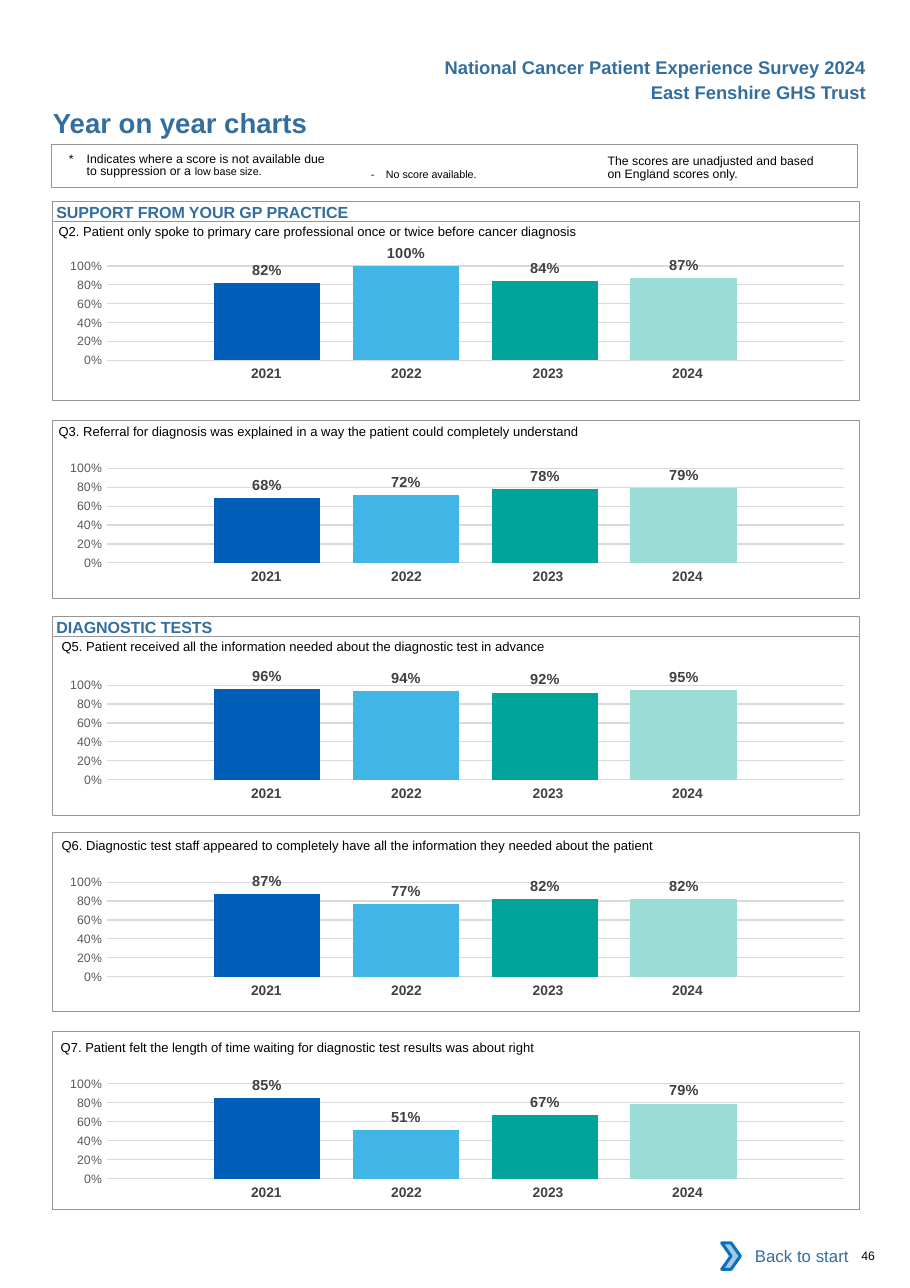
from pptx import Presentation
from pptx.chart.data import CategoryChartData
from pptx.dml.color import RGBColor
from pptx.enum.chart import XL_CHART_TYPE as ChartType, XL_LABEL_POSITION as LabelPos
from pptx.enum.chart import XL_TICK_MARK as Tick
from pptx.enum.shapes import MSO_SHAPE as Shape
from pptx.enum.text import MSO_ANCHOR as Anchor, PP_ALIGN as Align
from pptx.oxml import parse_xml
from pptx.oxml.ns import nsdecls
from pptx.util import Cm, Pt

COLORS = {
    "heading": "336E9F", "text": "000000", "frame": "939598", "white": "FFFFFF",
    "year": "414042", "label": "404040", "axis": "595959", "grid": "D9D9D9",
    "arrow": "A8C7E9", "arrow_line": "0A74BB",
}
YEARS = {"2021": "005EB8", "2022": "41B6E6", "2023": "00A499", "2024": "9CDCD7"}
YEAR_WIDTHS = [3.23, 3.23, 3.4, 3.23]
YEAR_INSETS = [0, 0, 0.1, 0.3]
LEFT, WIDTH, PANEL_H, SECTION_H = 1.22, 18.59, 4.11, 0.47

# frame top, section, question, question offset (x, y), chart offset, scores
PANELS = [
    (5.11, "SUPPORT FROM YOUR GP PRACTICE",
     "Q2. Patient only spoke to primary care professional once or twice before cancer diagnosis",
     (0.13, -0.18), 0.53, (0.82, 1, 0.84, 0.87)),
    (9.68, None,
     "Q3. Referral for diagnosis was explained in a way the patient could completely understand",
     (0.13, -0.15), 0.64, (0.68, 0.72, 0.78, 0.79)),
    (14.68, "DIAGNOSTIC TESTS",
     "Q5. Patient received all the information needed about the diagnostic test in advance",
     (0.2, -0.18), 0.64, (0.96, 0.94, 0.92, 0.95)),
    (19.2, None,
     "Q6. Diagnostic test staff appeared to completely have all the information "
     "they needed about the patient",
     (0.2, -0.13), 0.66, (0.87, 0.77, 0.82, 0.82)),
    (23.77, None,
     "Q7. Patient felt the length of time waiting for diagnostic test results was about right",
     (0.18, -0.03), 0.74, (0.85, 0.51, 0.67, 0.79)),
]


def rgb(name):
    return RGBColor.from_string(COLORS[name])


def style_font(font, size, color, bold=False):
    font.name, font.size, font.bold = "Arial", Pt(size), bold
    font.color.rgb = rgb(color)


def write(tf, text, size, color="text", bold=False, align=Align.LEFT,
          inset=(0, 0, 0, 0), wrap=True):
    tf.word_wrap = wrap
    tf.margin_left, tf.margin_top, tf.margin_right, tf.margin_bottom = map(Cm, inset)
    tf.text = text
    p = tf.paragraphs[0]
    p.alignment = align
    style_font(p.runs[0].font, size, color, bold)
    return p


def add_text(s, x, y, w, h, text, size, **style):
    sp = s.shapes.add_textbox(Cm(x), Cm(y), Cm(w), Cm(h))
    return write(sp.text_frame, text, size, **style)


def add_box(s, x, y, w, h, kind=Shape.RECTANGLE, fill=None, line="frame", weight=0.5):
    sp = s.shapes.add_shape(kind, Cm(x), Cm(y), Cm(w), Cm(h))
    sp.shadow.inherit = False
    if fill:
        sp.fill.solid()
        sp.fill.fore_color.rgb = rgb(fill)
    else:
        sp.fill.background()
    if line:
        sp.line.color.rgb = rgb(line)
        sp.line.width = Pt(weight)
    else:
        sp.line.fill.background()
    return sp


def hang(p, indent):
    pPr = p._p.get_or_add_pPr()
    pPr.set("marL", str(Cm(indent)))
    pPr.set("indent", str(-Cm(indent)))


def add_header(s, x, y, w):
    lines = ["National Cancer Patient Experience Survey 2024", "East Fenshire GHS Trust"]
    for i, line in enumerate(lines):
        add_text(s, x + w - 10.26, y + i * 0.57, 10.26, 0.76, line, 12, color="heading",
                 bold=True, align=Align.RIGHT, inset=(0.25, 0.13, 0.25, 0.13), wrap=False)
    add_text(s, x, y + 1.28, 11.43, 0.76, "Year on year charts", 18,
             color="heading", bold=True)


def add_legend(s, x, y, w, h):
    add_box(s, x, y, w, h, weight=0.75)
    # Suppressed scores
    p = add_text(s, x + 0.4, y + 0.13, 6.1, 0.7, "*\tIndicates where a score is not "
                 "available due to suppression or a ", 8, inset=(0, 0.08, 0, 0))
    hang(p, 0.41)
    p.line_spacing = Pt(8.1)
    r = p.add_run()
    r.text = "low base size."
    style_font(r.font, 7, "text")
    # Missing scores
    p = add_text(s, x + 7.36, y + 0.53, 4.2, 0.35, "-\tNo score available.", 7)
    hang(p, 0.35)
    # Basis of scores
    p = add_text(s, x + 12.82, y + 0.18, 5.11, 0.69,
                 "The scores are unadjusted and based on England scores only.", 8,
                 inset=(0, 0.08, 0, 0))
    p.line_spacing = Pt(8.1)


def add_years(s, x, y):
    table = s.shapes.add_table(1, len(YEARS), Cm(x), Cm(y),
                               Cm(sum(YEAR_WIDTHS)), Cm(0.69)).table
    table.first_row = table.horz_banding = False
    for i, year in enumerate(YEARS):
        table.columns[i].width = Cm(YEAR_WIDTHS[i])
        cell = table.cell(0, i)
        cell.fill.background()
        cell.margin_left, cell.margin_right = Cm(0.25), Cm(YEAR_INSETS[i])
        cell.text = year
        p = cell.text_frame.paragraphs[0]
        p.alignment = Align.CENTER
        style_font(p.runs[0].font, 9, "year", True)


def add_scores(s, x, y, w, h, scores):
    data = CategoryChartData(number_format="0%")
    data.categories = ["1"]
    for year, score in zip(YEARS, scores):
        data.add_series(year, [score])
    chart = s.shapes.add_chart(ChartType.COLUMN_CLUSTERED, Cm(x), Cm(y), Cm(w), Cm(h),
                               data).chart
    chart.has_legend = chart.has_title = False
    chart.font.name, chart.font.size = "Calibri", Pt(10)
    chart.font.color.rgb = rgb("text")
    # Axes
    chart.category_axis.visible = False
    axis = chart.value_axis
    axis.minimum_scale, axis.maximum_scale, axis.major_unit = 0, 1, 0.2
    axis.major_tick_mark = axis.minor_tick_mark = Tick.NONE
    axis.format.line.fill.background()
    axis.major_gridlines.format.line.color.rgb = rgb("grid")
    axis.major_gridlines.format.line.width = Pt(0.75)
    axis.tick_labels.number_format, axis.tick_labels.number_format_is_linked = "0%", False
    style_font(axis.tick_labels.font, 8, "axis")
    # Columns
    plot = chart.plots[0]
    plot.gap_width, plot.overlap, plot.vary_by_categories = 200, -30, False
    for series, color in zip(plot.series, YEARS.values()):
        series.format.fill.solid()
        series.format.fill.fore_color.rgb = RGBColor.from_string(color)
        labels = series.data_labels
        labels.show_value, labels.position = True, LabelPos.OUTSIDE_END
        labels.number_format, labels.number_format_is_linked = "0%", False
        style_font(labels.font, 9.5, "label", True)
    # Fixed plot area
    area = chart._chartSpace.chart.plotArea
    for old in area.findall("{*}layout"):
        area.remove(old)
    place = {"layoutTarget": "inner", "xMode": "edge", "yMode": "edge",
             "x": 0.079, "y": 0.145, "w": 0.915, "h": 0.666}
    tags = "".join(f'<c:{tag} val="{val}"/>' for tag, val in place.items())
    area.insert(0, parse_xml(f'<c:layout {nsdecls("c")}><c:manualLayout>{tags}'
                             '</c:manualLayout></c:layout>'))


def add_panel(s, x, y, w, h, section, question, offset, chart_y, scores):
    if section:
        bar = add_box(s, x, y - SECTION_H, w, SECTION_H)
        bar.text_frame.vertical_anchor = Anchor.TOP
        write(bar.text_frame, section, 10.5, color="heading", bold=True,
              inset=(0.08, 0.03, 0, 0))
    add_text(s, x + offset[0], y + offset[1], w - 0.25, 0.61, question, 8.5,
             inset=(0, 0.23, 0, 0))
    add_years(s, x + 3.18, y + chart_y + 2.67)
    add_scores(s, x - 0.23, y + chart_y, w, 3.28, scores)
    add_box(s, x, y, w, h)


def add_footer(s, x, y):
    button = add_box(s, x + 0.18, y, 3, 1.07, fill="white", line=None)
    button.text_frame.vertical_anchor = Anchor.MIDDLE
    write(button.text_frame, "Back to start", 11, color="heading", align=Align.RIGHT,
          inset=(0.25, 0.13, 0.25, 0.13))
    add_box(s, x, y + 0.23, 0.43, 0.61, Shape.CHEVRON, "arrow", "arrow_line", 2)
    add_text(s, x + 3.22, y + 0.36, 1, 0.33, "46", 8)


def main():
    prs = Presentation()
    prs.slide_width, prs.slide_height = Cm(20.98), Cm(29.69)
    s = prs.slides.add_slide(prs.slide_layouts[6])
    add_header(s, LEFT, 1.17, 19)
    add_legend(s, 1.19, 3.33, WIDTH, 0.99)
    for top, *parts in PANELS:
        add_panel(s, LEFT, top, WIDTH, PANEL_H, *parts)
    add_footer(s, 16.64, 28.42)
    prs.save("out.pptx")


if __name__ == "__main__":
    main()
